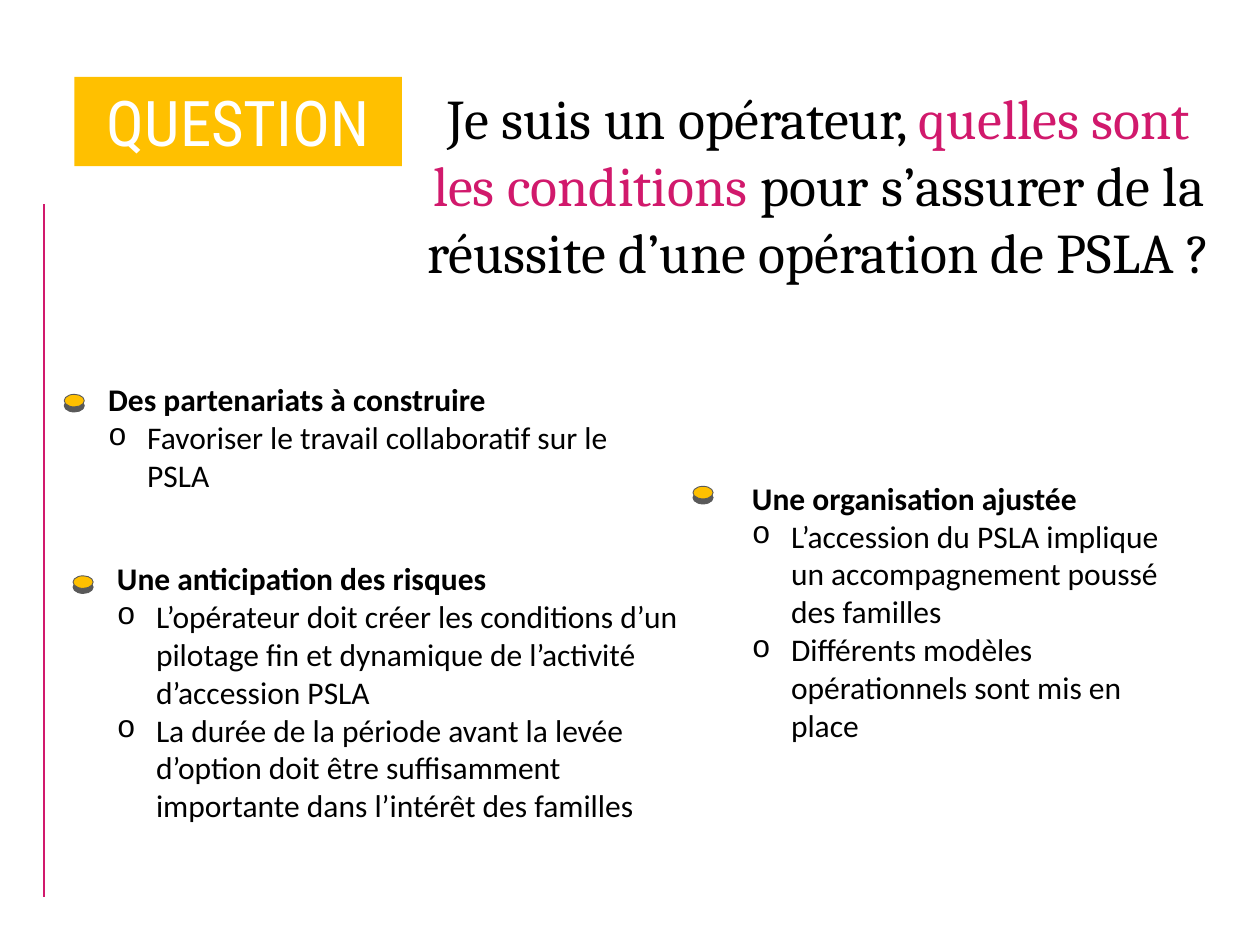
from lxml import etree
from pptx import Presentation
from pptx.dml.color import RGBColor
from pptx.enum.shapes import MSO_CONNECTOR, MSO_SHAPE
from pptx.enum.text import MSO_ANCHOR, MSO_AUTO_SIZE, PP_ALIGN
from pptx.oxml.ns import qn
from pptx.util import Inches, Pt

CENTER, LEFT = PP_ALIGN.CENTER, PP_ALIGN.LEFT
TOP, NO_FIT = MSO_ANCHOR.TOP, MSO_AUTO_SIZE.NONE
RECT, OVAL, STRAIGHT = MSO_SHAPE.RECTANGLE, MSO_SHAPE.OVAL, MSO_CONNECTOR.STRAIGHT

BLACK = RGBColor(0x00, 0x00, 0x00)
WHITE = RGBColor(0xFF, 0xFF, 0xFF)
GOLD = RGBColor(0xFF, 0xC0, 0x00)
PINK = RGBColor(0xD1, 0x19, 0x6C)
GREY = RGBColor(0x59, 0x59, 0x59)

TITLE = [
    ("Je suis un opérateur, ", BLACK),
    ("quelles sont les conditions ", PINK),
    ("pour s’assurer de la réussite d’une opération de PSLA ?", BLACK),
]
# Text box (left, top, width, height), marker (left, top), heading, items
SECTIONS = [
    ((0.76, 2.97, 4.65, 1.01), (0.51, 3.13), "Des partenariats à construire",
     ["Favoriser le travail collaboratif sur le PSLA"]),
    ((5.87, 3.75, 3.54, 2.22), (5.5, 3.86), "Une organisation ajustée",
     ["L’accession du PSLA implique un accompagnement poussé des familles",
      "Différents modèles opérationnels sont mis en place"]),
    ((0.83, 4.39, 4.65, 2.22), (0.58, 4.57), "Une anticipation des risques",
     ["L’opérateur doit créer les conditions d’un pilotage fin et dynamique "
      "de l’activité d’accession PSLA",
      "La durée de la période avant la levée d’option doit être suffisamment "
      "importante dans l’intérêt des familles"]),
]


def box(*lengths):
    return [Inches(v) for v in lengths]


def set_frame(tf):
    for name, value in dict(word_wrap=True, auto_size=NO_FIT,
                            vertical_anchor=TOP).items():
        setattr(tf, name, value)


def add_run(p, text, color, **font):
    r = p.add_run()
    r.text = text
    r.font.color.rgb = color
    for name, value in font.items():
        setattr(r.font, name, value)


def add_bullet(p):
    pPr = p._p.get_or_add_pPr()
    pPr.set("marL", str(Inches(0.31)))
    pPr.set("indent", str(-Inches(0.31)))
    etree.SubElement(pPr, qn("a:buFont")).set("typeface", "Courier New")
    etree.SubElement(pPr, qn("a:buChar")).set("char", "o")


def add_title(s):
    title = s.shapes.title
    title.left, title.top, title.width, title.height = box(3.27, 0.61, 6.46, 2.26)
    set_frame(title.text_frame)
    p = title.text_frame.paragraphs[0]
    p.alignment = CENTER
    for text, color in TITLE:
        add_run(p, text, color, name="Cambria", size=Pt(32))


def add_label(s):
    sp = s.shapes.add_shape(RECT, *box(0.59, 0.61, 2.6, 0.71))
    sp.shadow.inherit = False
    sp.fill.solid()
    sp.fill.fore_color.rgb = GOLD
    sp.line.fill.background()
    set_frame(sp.text_frame)
    p = sp.text_frame.paragraphs[0]
    p.alignment = CENTER
    add_run(p, "QUESTION", WHITE, name="Roboto Condensed", size=Pt(36))


def add_rule(s):
    line = s.shapes.add_connector(STRAIGHT, *box(0.35, 1.62, 0.35, 7.12))
    line.line.color.rgb = PINK
    line.line.width = Pt(1.5)
    etree.SubElement(line._element.spPr, qn("a:effectLst"))


def add_section(s, area, heading, items):
    tf = s.shapes.add_textbox(*box(*area)).text_frame
    set_frame(tf)
    font = dict(name="Calibri", size=Pt(18))
    add_run(tf.paragraphs[0], heading, BLACK, bold=True, **font)
    for item in items:
        p = tf.add_paragraph()
        p.alignment = LEFT
        add_bullet(p)
        add_run(p, item, BLACK, bold=False, **font)


def add_marker(s, left, top):
    """Gold disc whose hard shadow gives it a thick edge."""
    sp = s.shapes.add_shape(OVAL, *box(left, top, 0.16, 0.1))
    sp.fill.solid()
    sp.fill.fore_color.rgb = GOLD
    sp.line.color.rgb = GREY
    sp.line.width = Pt(0.5)
    sp.shadow.inherit = False
    effects = sp._element.spPr.find(qn("a:effectLst"))
    shadow = etree.SubElement(effects, qn("a:outerShdw"), blurRad="0",
                              dist=str(Inches(0.04)), dir="5400000",
                              algn="ctr", rotWithShape="0")
    etree.SubElement(shadow, qn("a:srgbClr")).set("val", str(GREY))


def main():
    prs = Presentation()
    prs.slide_width, prs.slide_height = box(10, 7.5)
    s = prs.slides.add_slide(prs.slide_layouts[5])
    add_title(s)
    add_label(s)
    add_rule(s)
    for area, marker, heading, items in SECTIONS:
        add_section(s, area, heading, items)
        add_marker(s, *marker)
    prs.save("out.pptx")


if __name__ == "__main__":
    main()
